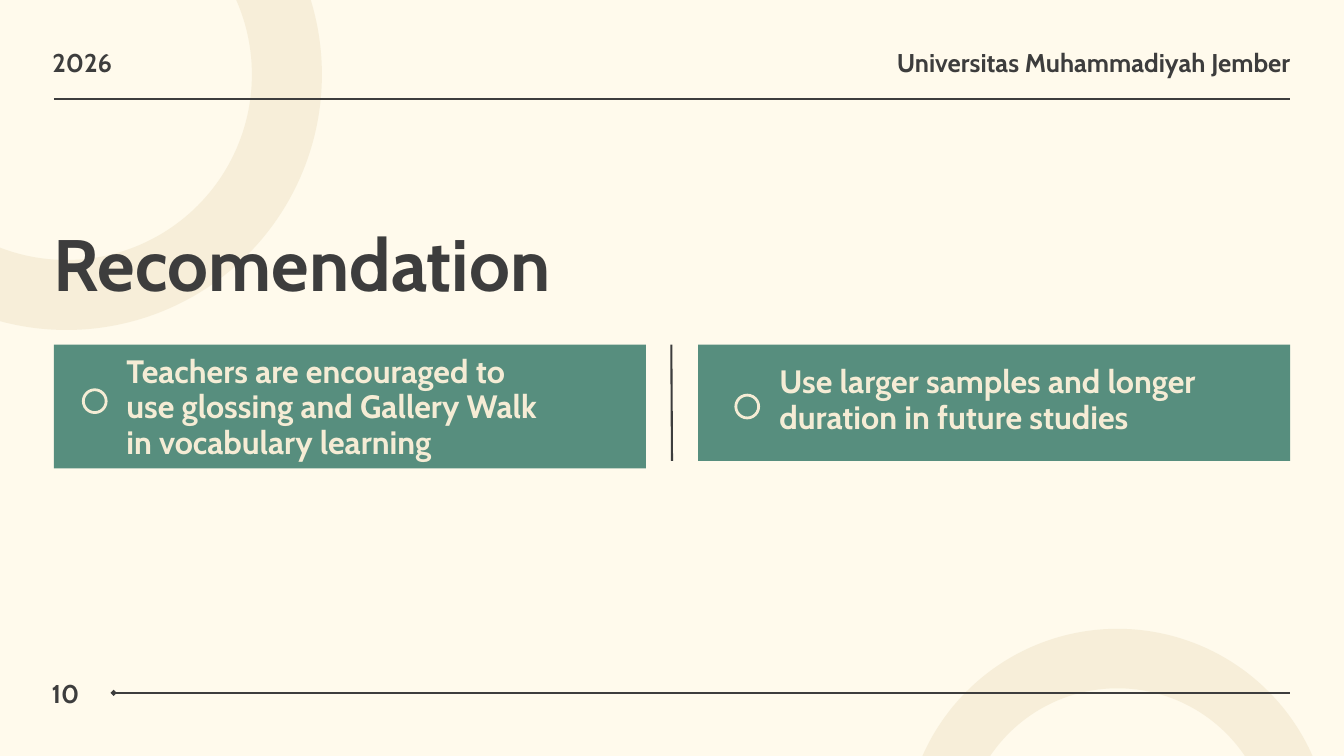
from lxml.etree import SubElement
from pptx import Presentation
from pptx.dml.color import RGBColor
from pptx.enum.shapes import MSO_CONNECTOR, MSO_SHAPE
from pptx.enum.text import MSO_ANCHOR, MSO_AUTO_SIZE, PP_ALIGN
from pptx.oxml.ns import qn
from pptx.util import Inches, Pt

COLORS = {name: RGBColor.from_string(value) for name, value in {
    "paper": "FFFAEC",
    "sand": "F5ECD5",
    "green": "578E7E",
    "ink": "3D3D3D",
}.items()}
LEFT, RIGHT = 0.8, 19.2
CARD_TOP, CARD_WIDTH = 5.13, 8.81

prs = Presentation()
prs.slide_width, prs.slide_height = Inches(20), Inches(11.25)
s = prs.slides.add_slide(prs.slide_layouts[5])
s.background.fill.solid()
s.background.fill.fore_color.rgb = COLORS["paper"]


def add_text(text, x, y, w, h, size=27.5, spacing=30.2, color="ink",
             align=PP_ALIGN.LEFT, box=None):
    """Write text in the given box, or in a new text box."""
    if box is None:
        box = s.shapes.add_textbox(0, 0, 0, 0)
    box.left, box.top, box.width, box.height = map(Inches, (x, y, w, h))
    tf = box.text_frame
    tf.word_wrap = True
    tf.auto_size = MSO_AUTO_SIZE.NONE
    tf.vertical_anchor = MSO_ANCHOR.TOP
    tf.margin_left = tf.margin_top = tf.margin_right = tf.margin_bottom = 0
    p = tf.paragraphs[0]
    p.alignment = align
    p.line_spacing = Pt(spacing)
    r = p.add_run()
    r.text = text
    r.font.name = "Cabin"
    r.font.size = Pt(size)
    r.font.bold = True
    r.font.color.rgb = COLORS[color]


def add_shape(kind, x, y, w, h, fill=None, line_width=0):
    sp = s.shapes.add_shape(kind, *map(Inches, (x, y, w, h)))
    sp.shadow.inherit = False
    if fill:
        sp.fill.solid()
        sp.fill.fore_color.rgb = COLORS[fill]
    else:
        sp.fill.background()
    if line_width:
        sp.line.color.rgb = COLORS["sand"]
        sp.line.width = Pt(line_width)
    else:
        sp.line.fill.background()
    return sp


# Background rings
for x, y, size, width in [(-2.29, -2.17, 6.56, 75), (13.9, 9.8, 5.46, 63.75)]:
    ring = add_shape(MSO_SHAPE.OVAL, x, y, size, size, line_width=width)
    line_color = next(ring.element.iter(qn("a:srgbClr")))
    SubElement(line_color, qn("a:alpha"), val="80000")

# Divider, header rule and footer rule
for x1, y1, x2, y2, head in [
    (9.99, CARD_TOP, 10, 6.86, None),
    (LEFT, 1.48, RIGHT, 1.48, None),
    (1.69, 10.31, RIGHT, 10.31, "diamond"),
]:
    rule = s.shapes.add_connector(MSO_CONNECTOR.STRAIGHT,
                                  *map(Inches, (x1, y1, x2, y2)))
    rule.line.color.rgb = COLORS["ink"]
    rule.line.width = Pt(2.25)
    sp_pr = rule.element.spPr
    if head:
        SubElement(sp_pr.find(qn("a:ln")), qn("a:headEnd"), type=head)
    SubElement(sp_pr, qn("a:effectLst"))

# Title, brought in front of the ring
title = s.shapes.title
add_text("Recomendation", LEFT, 3.36, 7.99, 1.22, size=78, spacing=85.8, box=title)
s.shapes.element.append(title.element)

# Header and footer
add_text("2026", 0.78, 0.73, 0.92, 0.42)
add_text("Universitas Muhammadiyah Jember", 12.92, 0.73, 6.28, 0.42,
         align=PP_ALIGN.RIGHT)
add_text("10", 0.77, 10.12, 0.46, 0.42)

# Recommendation cards: left, height, bullet position, text box
cards = [
    (LEFT, 1.84, (1.24, 5.8), (1.88, 5.27, 6.34, 1.59),
     "Teachers are encouraged to use glossing and Gallery Walk in vocabulary learning"),
    (RIGHT - CARD_WIDTH, 1.73, (10.95, 5.88), (11.6, 5.43, 7.07, 1.07),
     "Use larger samples and longer duration in future studies"),
]
for x, height, bullet, text_box, text in cards:
    add_shape(MSO_SHAPE.RECTANGLE, x, CARD_TOP, CARD_WIDTH, height, fill="green")
    add_shape(MSO_SHAPE.OVAL, *bullet, 0.34, 0.34, fill="green", line_width=3)
    add_text(text, *text_box, size=34.6, spacing=38.1, color="sand")

prs.save("out.pptx")
